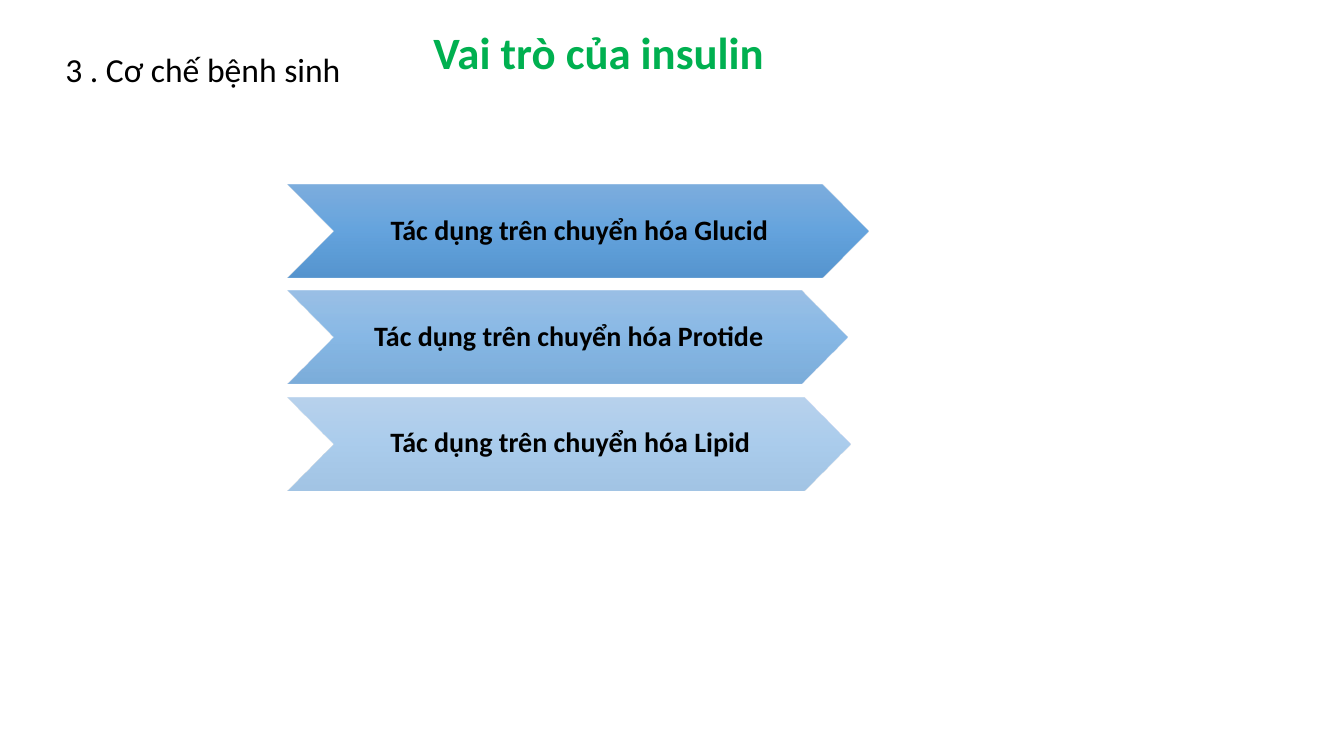
from dataclasses import dataclass

from lxml import etree
from pptx import Presentation
from pptx.dml.color import RGBColor
from pptx.enum import shapes, text
from pptx.oxml import ns
from pptx.util import Pt

BLACK = RGBColor(0x00, 0x00, 0x00)
GREEN = RGBColor(0x00, 0xB0, 0x50)
SHADES = (
    (0, RGBColor(0x71, 0xA6, 0xDB)),
    (50, RGBColor(0x55, 0x9B, 0xDB)),
    (100, RGBColor(0x44, 0x8A, 0xCA)),
)

LEFT, TOP = 205.2, 131.8
HIGH, STEP = 66.4, 76


@dataclass
class Arrow:
    label: str
    width: float
    alpha: int  # opacity in percent


ARROWS = (
    Arrow("Tác dụng trên chuyển hóa Glucid", 415.4, 90),
    Arrow("Tác dụng trên chuyển hóa Protide", 400.3, 70),
    Arrow("Tác dụng trên chuyển hóa Lipid", 402.5, 50),
)


def write(shape, words: str, *, size: float, color: RGBColor = BLACK,
          bold: bool = False, align=text.PP_ALIGN.LEFT,
          anchor=text.MSO_ANCHOR.MIDDLE, space: float = 0.9,
          wrap: bool = True) -> None:
    """Put one formatted paragraph in a shape."""
    frame = shape.text_frame
    frame.word_wrap = wrap
    frame.vertical_anchor = anchor
    para = frame.paragraphs[0]
    para.alignment = align
    para.line_spacing = space
    run = para.add_run()
    run.text = words
    font = run.font
    font.name, font.size, font.bold = "Calibri", Pt(size), bold
    font.color.rgb = color


def shade(shape, alpha: int) -> None:
    """Fill from top to bottom with translucent shades of blue."""
    shape.fill.gradient()
    shape.fill.gradient_angle = 270
    stops = shape._element.spPr.find(".//" + ns.qn("a:gsLst"))
    for old in list(stops):
        stops.remove(old)
    for place, color in SHADES:
        stop = etree.SubElement(stops, ns.qn("a:gs"), pos=str(place * 1000))
        tint = etree.SubElement(stop, ns.qn("a:srgbClr"), val=str(color))
        etree.SubElement(tint, ns.qn("a:alpha"), val=str(alpha * 1000))


def draw(group, arrow: Arrow, row: int) -> None:
    """Add one labelled chevron to the stack."""
    shape = group.shapes.add_shape(
        shapes.MSO_SHAPE.CHEVRON, Pt(LEFT), Pt(TOP + row * STEP),
        Pt(arrow.width), Pt(HIGH))
    shape.shadow.inherit = False
    shape.line.fill.background()
    shade(shape, arrow.alpha)
    frame = shape.text_frame
    frame.margin_left, frame.margin_right = Pt(2), Pt(0)
    frame.margin_top = frame.margin_bottom = Pt(1)
    write(shape, arrow.label, size=20, bold=True, align=text.PP_ALIGN.CENTER)


def main() -> None:
    deck = Presentation()
    deck.slide_width, deck.slide_height = Pt(960), Pt(540)
    slide = deck.slides.add_slide(deck.slide_layouts[5])

    # Title
    title = slide.shapes.title
    title.left, title.top = Pt(302.4), Pt(-5.8)
    title.width, title.height = Pt(864), Pt(90)
    write(title, "Vai trò của insulin", size=32, color=GREEN, bold=True)

    # Section label
    label = slide.shapes.add_textbox(Pt(39.6), Pt(31.7), Pt(213), Pt(36))
    write(label, "3 . Cơ chế bệnh sinh", size=24, space=1.0, wrap=False,
          anchor=text.MSO_ANCHOR.TOP)
    label.text_frame.auto_size = text.MSO_AUTO_SIZE.SHAPE_TO_FIT_TEXT

    # Effects of insulin
    group = slide.shapes.add_group_shape()
    for row, arrow in enumerate(ARROWS):
        draw(group, arrow, row)

    deck.save("out.pptx")


if __name__ == "__main__":
    main()
